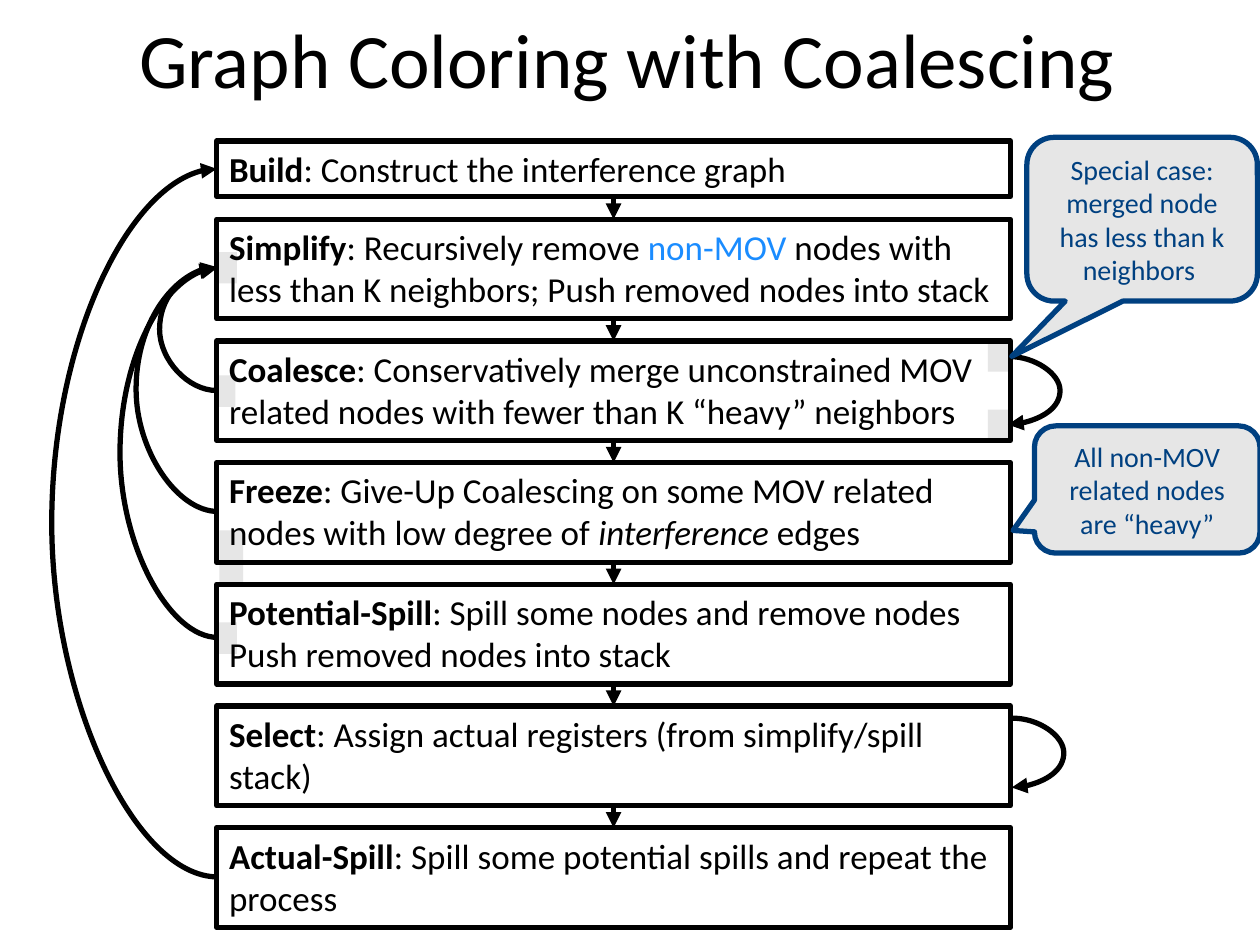
"""Build the slide on graph coloring with coalescing."""
from dataclasses import dataclass

from lxml.etree import SubElement
from pptx import Presentation
from pptx.dml.color import RGBColor
from pptx.enum.shapes import MSO_CONNECTOR as Connector, MSO_SHAPE as Shape
from pptx.enum.text import MSO_ANCHOR as Anchor, PP_ALIGN as Align
from pptx.oxml.ns import qn
from pptx.util import Inches, Pt


@dataclass(frozen=True)
class Theme:
    font: str = "Calibri"
    ink: RGBColor = RGBColor(0x00, 0x00, 0x00)
    accent: RGBColor = RGBColor(0x1A, 0x8C, 0xFF)
    navy: RGBColor = RGBColor(0x00, 0x40, 0x80)
    gray: RGBColor = RGBColor(0xE6, 0xE6, 0xE6)
    title_size: int = 44
    step_size: int = 20
    callout_size: int = 16
    line_width: int = 3


THEME = Theme()
BOX_LEFT, BOX_WIDTH = 1.72, 6.3
BUILD_TOP, BUILD_HEIGHT = 1.12, 0.44
FIRST_TOP, LAST_TOP, STEP_HEIGHT = 1.74, 6.57, 0.79
LOOP_OFFSET = 0.01

STEPS = [
    [[("Build", "bold"), (": Construct the interference graph", "")]],
    [[("Simplify", "bold"), (": Recursively remove ", ""), ("non-MOV", "accent"),
      (" nodes with less than K neighbors; Push removed nodes into stack", "")]],
    [[("Coalesce", "bold"),
      (": Conservatively merge unconstrained MOV related nodes with fewer than K “heavy” neighbors", "")]],
    [[("Freeze", "bold"), (": Give-Up Coalescing on some MOV related nodes with low degree of ", ""),
      ("interference", "italic"), (" edges", "")]],
    [[("Potential-Spill", "bold"), (": Spill some nodes and remove nodes", "")],
     [("Push removed nodes into stack", "")]],
    [[("Select", "bold"), (": Assign actual registers (from simplify/spill stack)", "")]],
    [[("Actual-Spill", "bold"), (": Spill some potential spills and repeat the process", "")]],
]

GRAY_MARKS = [
    (1.74, 4.21, 0.19, 0.42),
    (1.72, 2.0, 0.16, 0.25),
    (1.71, 2.98, 0.16, 0.25),
    (1.72, 4.94, 0.16, 0.25),
    (7.84, 2.7, 0.16, 0.25),
    (7.84, 3.25, 0.16, 0.25),
]

# Each loop: start x, start y, end y, x of the bulge
LOOPS = [
    (1.73, 6.96, 1.34, 0.39),
    (1.72, 3.1, 2.13, 1.26),
    (1.73, 4.06, 2.12, 1.07),
    (1.73, 5.06, 2.13, 0.94),
    (8.04, 5.7, 6.25, 8.45),
    (8.01, 2.83, 3.37, 8.42),
]

CALLOUTS = [
    ("Special case: merged node has less than k neighbors ",
     (8.15, 1.09, 1.83, 1.3), (-0.565, 0.837, 0.167)),
    ("All non-MOV related nodes are “heavy”",
     (8.21, 3.38, 1.79, 1.01), (-0.595, 0.322, 0.167)),
]


def format_run(run, size, color, style=""):
    """Give a run its font, size, colour and emphasis."""
    run.font.name = THEME.font
    run.font.size = Pt(size)
    run.font.color.rgb = THEME.accent if style == "accent" else color
    run.font.bold = style == "bold"
    run.font.italic = style == "italic"


def set_centered_text(shape, text, size, color):
    """Write one centred, wrapped paragraph in the middle of a shape."""
    frame = shape.text_frame
    frame.word_wrap = True
    frame.vertical_anchor = Anchor.MIDDLE
    frame.text = text
    paragraph = frame.paragraphs[0]
    paragraph.alignment = Align.CENTER
    format_run(paragraph.runs[0], size, color)


def add_panel(slide, kind, bounds, fill=None, line=None):
    """Add a preset shape with an optional fill and outline."""
    shape = slide.shapes.add_shape(kind, *map(Inches, bounds))
    shape.shadow.inherit = False
    if fill is None:
        shape.fill.background()
    else:
        shape.fill.solid()
        shape.fill.fore_color.rgb = fill
    if line is None:
        shape.line.fill.background()
    else:
        shape.line.color.rgb = line
        shape.line.width = Pt(THEME.line_width)
    return shape


def add_title(slide, text):
    """Add the slide title."""
    box = slide.shapes.add_textbox(*map(Inches, (0.73, -0.17, 8.5, 1.25)))
    set_centered_text(box, text, THEME.title_size, THEME.ink)


def add_step(slide, top, height, paragraphs):
    """Add one outlined box for a step of the algorithm."""
    shape = add_panel(slide, Shape.RECTANGLE, (BOX_LEFT, top, BOX_WIDTH, height), line=THEME.ink)
    frame = shape.text_frame
    frame.word_wrap = True
    frame.vertical_anchor = Anchor.TOP
    for index, parts in enumerate(paragraphs):
        paragraph = frame.add_paragraph() if index else frame.paragraphs[0]
        paragraph.alignment = Align.LEFT
        for text, style in parts:
            run = paragraph.add_run()
            run.text = text
            format_run(run, THEME.step_size, THEME.ink, style)
    return shape


def add_arrow(slide, kind, start, end):
    """Add a connector with an arrowhead at its end."""
    connector = slide.shapes.add_connector(kind, *map(Inches, start + end))
    connector.line.color.rgb = THEME.ink
    connector.line.width = Pt(THEME.line_width)
    SubElement(connector.line._get_or_add_ln(), qn("a:tailEnd"), type="triangle")
    SubElement(connector._element.spPr, qn("a:effectLst"))
    return connector


def add_step_arrow(slide, upper, lower):
    """Join the bottom of one step to the top of the next."""
    arrow = add_arrow(slide, Connector.STRAIGHT, (0, 0), (1, 1))
    arrow.begin_connect(upper, 2)
    arrow.end_connect(lower, 0)


def add_loop(slide, x, start_y, end_y, bulge_x):
    """Add a curved arrow that swings out to bulge_x and back."""
    loop = add_arrow(slide, Connector.CURVE, (x, start_y), (x - LOOP_OFFSET, end_y))
    ratio = round((x - bulge_x) / LOOP_OFFSET * 100000)
    guides = loop._element.spPr.find(qn("a:prstGeom")).get_or_add_avLst()
    SubElement(guides, qn("a:gd"), name="adj1", fmla=f"val {ratio}")


def add_callout(slide, text, bounds, adjustments):
    """Add a rounded speech bubble."""
    shape = add_panel(slide, Shape.ROUNDED_RECTANGULAR_CALLOUT, bounds, THEME.gray, THEME.navy)
    for index, value in enumerate(adjustments):
        shape.adjustments[index] = value
    set_centered_text(shape, text, THEME.callout_size, THEME.navy)


def main():
    """Build and save the slide."""
    presentation = Presentation()
    presentation.slide_width, presentation.slide_height = Inches(10), Inches(7.5)
    slide = presentation.slides.add_slide(presentation.slide_layouts[6])

    for bounds in GRAY_MARKS:
        add_panel(slide, Shape.RECTANGLE, bounds, fill=THEME.gray)
    add_title(slide, "Graph Coloring with Coalescing")

    pitch = (LAST_TOP - FIRST_TOP) / (len(STEPS) - 2)
    steps = [add_step(slide, BUILD_TOP, BUILD_HEIGHT, STEPS[0])]
    for index, paragraphs in enumerate(STEPS[1:]):
        steps.append(add_step(slide, FIRST_TOP + index * pitch, STEP_HEIGHT, paragraphs))
    for upper, lower in zip(steps, steps[1:]):
        add_step_arrow(slide, upper, lower)

    for loop in LOOPS:
        add_loop(slide, *loop)
    for callout in CALLOUTS:
        add_callout(slide, *callout)
    presentation.save("out.pptx")


if __name__ == "__main__":
    main()
